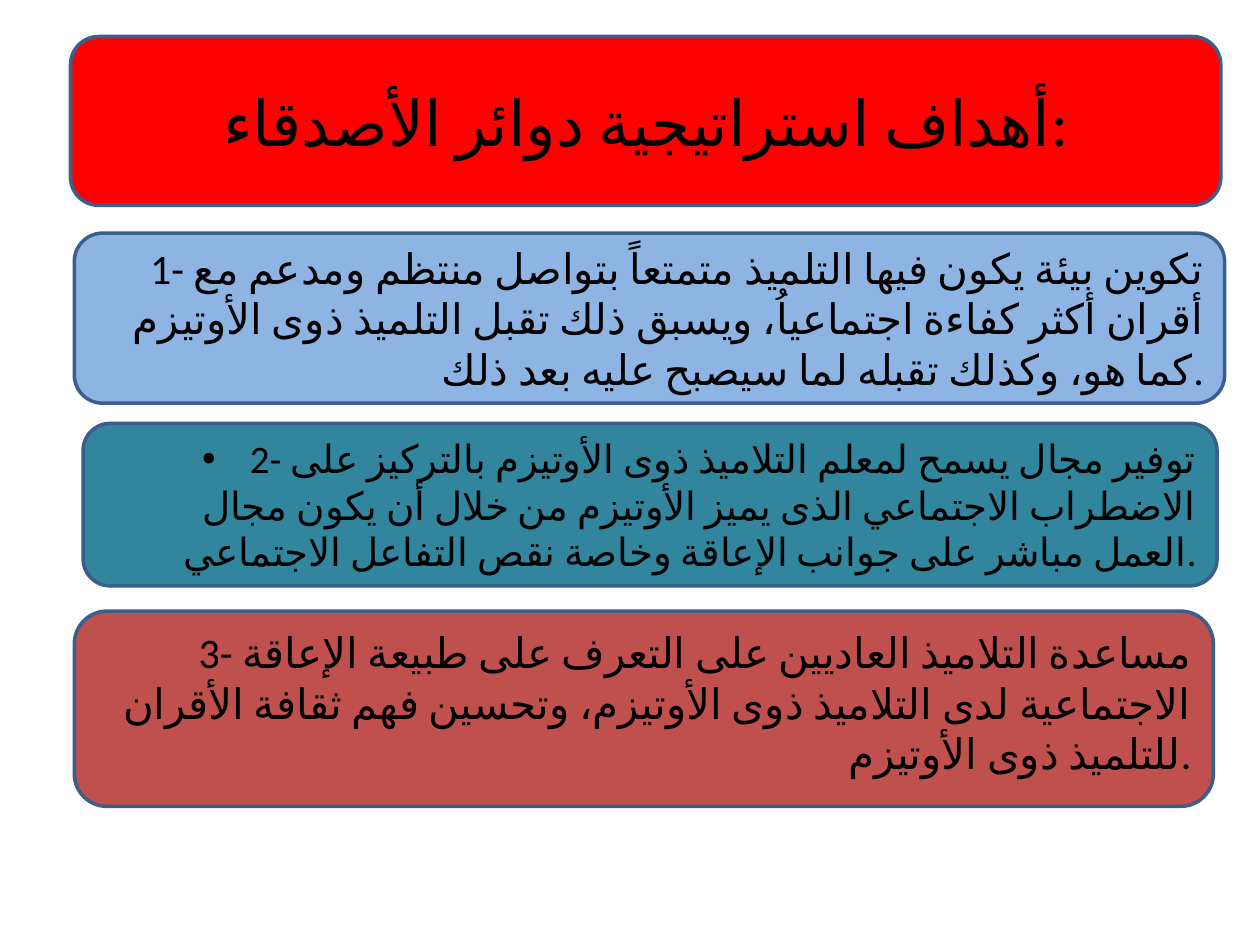
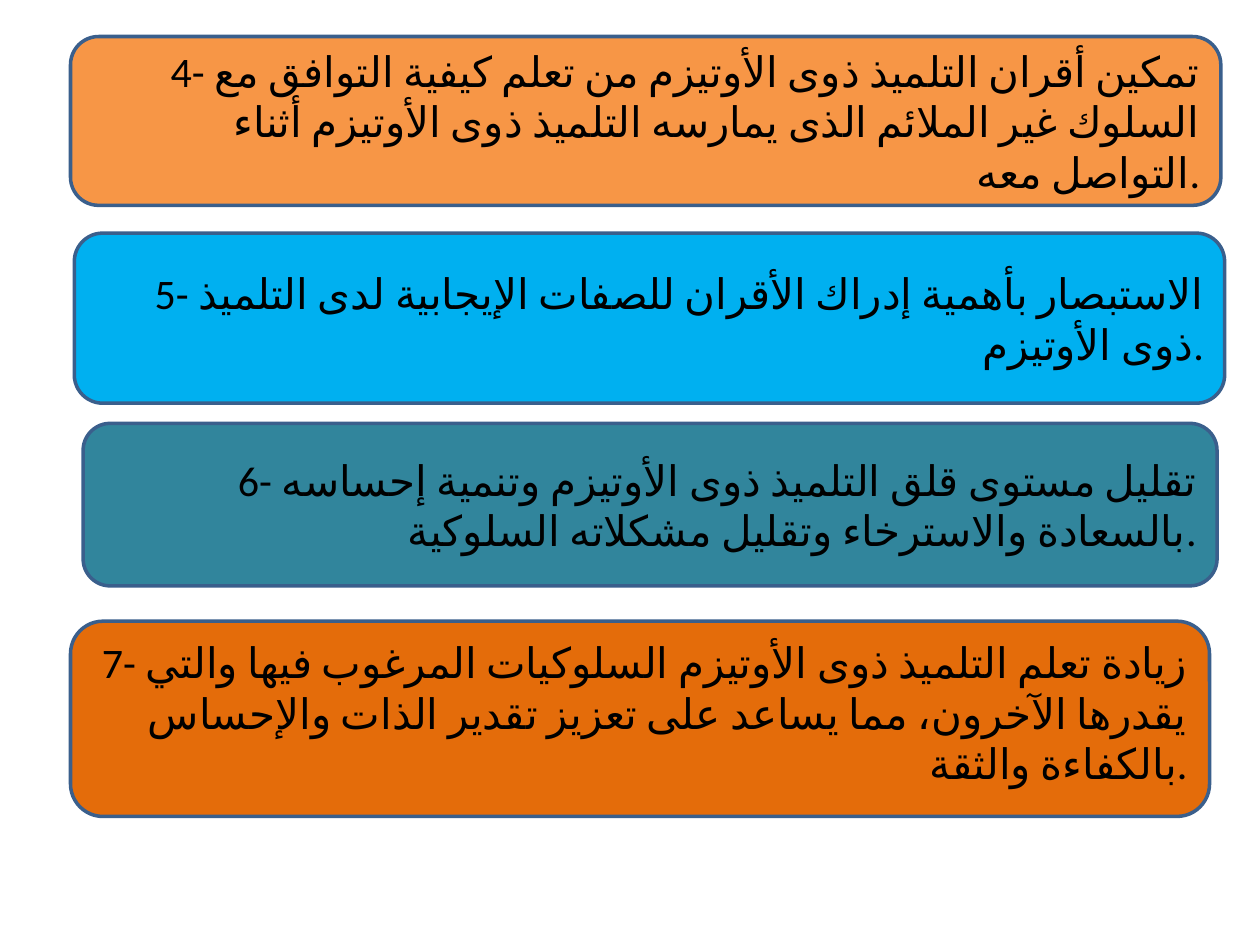
from lxml import etree
from pptx import Presentation
from pptx import util as u
from pptx.dml.color import RGBColor
from pptx.enum import lang, shapes, text
from pptx.oxml.ns import qn

PX = 9144
FONT = "Calibri"
BLACK = RGBColor(0x00, 0x00, 0x00)
OUTLINE = RGBColor(0x3A, 0x5F, 0x8C)
RED = RGBColor(0xFF, 0x00, 0x00)
PALE_BLUE = RGBColor(0x8E, 0xB4, 0xE3)
TEAL = RGBColor(0x31, 0x85, 0x9C)
BRICK = RGBColor(0xC0, 0x50, 0x4D)
ORANGE = RGBColor(0xF7, 0x96, 0x46)
SKY = RGBColor(0x00, 0xB0, 0xF0)
DARK_ORANGE = RGBColor(0xE4, 0x6C, 0x0A)

RIGHT = text.PP_ALIGN.RIGHT
CENTER = text.PP_ALIGN.CENTER
MIDDLE = text.MSO_ANCHOR.MIDDLE
TOP = text.MSO_ANCHOR.TOP

FIRST = (56, 29, 913, 134)
SECOND = (59, 185, 913, 135)
THIRD = (66, 336, 900, 129)
FOURTH_GOALS = (59, 485, 904, 155)
FOURTH_MORE = (56, 493, 904, 155)


def add_panel(page, place, fill, wording, size=24, align=RIGHT, anchor=MIDDLE, before=0, bullet=False):
    box = page.shapes.add_shape(
        shapes.MSO_SHAPE.FLOWCHART_ALTERNATE_PROCESS, *(length * PX for length in place))
    box.shadow.inherit = False
    box.fill.solid()
    box.fill.fore_color.rgb = fill
    box.line.color.rgb = OUTLINE
    box.line.width = u.Pt(2)
    frame = box.text_frame
    frame.word_wrap = True
    frame.vertical_anchor = anchor
    para = frame.paragraphs[0]
    span = para.add_run()
    span.text = wording
    span.font.language_id = lang.MSO_LANGUAGE_ID.ARABIC_EGYPT
    para.alignment = align
    para.space_before = u.Pt(before)
    properties = para._p.get_or_add_pPr()
    if bullet:
        properties.set("marL", str(38 * PX))
        properties.set("indent", str(-38 * PX))
        etree.SubElement(properties, qn("a:buFont"), typeface="Arial")
        etree.SubElement(properties, qn("a:buChar"), char="•")
    para.font.name = FONT
    para.font.size = u.Pt(size)
    para.font.color.rgb = BLACK
    etree.SubElement(properties.find(qn("a:defRPr")), qn("a:cs"), typeface=FONT)


deck = Presentation()
deck.slide_width = 1000 * PX
deck.slide_height = 750 * PX
blank = deck.slide_layouts[6]

goals = deck.slides.add_slide(blank)
add_panel(goals, FIRST, RED, "أهداف استراتيجية دوائر الأصدقاء:", size=36, align=CENTER)
add_panel(goals, SECOND, PALE_BLUE,
          "1- تكوين بيئة يكون فيها التلميذ متمتعاً بتواصل منتظم ومدعم مع أقران أكثر كفاءة اجتماعياُ، "
          "ويسبق ذلك تقبل التلميذ ذوى الأوتيزم كما هو، وكذلك تقبله لما سيصبح عليه بعد ذلك.")
add_panel(goals, THIRD, TEAL,
          "2- توفير مجال يسمح لمعلم التلاميذ ذوى الأوتيزم بالتركيز على الاضطراب الاجتماعي الذى يميز "
          "الأوتيزم من خلال أن يكون مجال العمل مباشر على جوانب الإعاقة وخاصة نقص التفاعل الاجتماعي.",
          size=22.2, before=4.4, bullet=True)
add_panel(goals, FOURTH_GOALS, BRICK,
          "3- مساعدة التلاميذ العاديين على التعرف على طبيعة الإعاقة الاجتماعية لدى التلاميذ ذوى "
          "الأوتيزم، وتحسين فهم ثقافة الأقران للتلميذ ذوى الأوتيزم.",
          anchor=TOP, before=4.8)

more_goals = deck.slides.add_slide(blank)
add_panel(more_goals, FIRST, ORANGE,
          "4- تمكين أقران التلميذ ذوى الأوتيزم من تعلم كيفية التوافق مع السلوك غير الملائم الذى "
          "يمارسه التلميذ ذوى الأوتيزم أثناء التواصل معه.")
add_panel(more_goals, SECOND, SKY,
          "5- الاستبصار بأهمية إدراك الأقران للصفات الإيجابية لدى التلميذ ذوى الأوتيزم.")
add_panel(more_goals, THIRD, TEAL,
          "6- تقليل مستوى قلق التلميذ ذوى الأوتيزم وتنمية إحساسه بالسعادة والاسترخاء وتقليل "
          "مشكلاته السلوكية.",
          before=4.8)
add_panel(more_goals, FOURTH_MORE, DARK_ORANGE,
          "7- زيادة تعلم التلميذ ذوى الأوتيزم السلوكيات المرغوب فيها والتي يقدرها الآخرون، مما يساعد "
          "على تعزيز تقدير الذات والإحساس بالكفاءة والثقة.",
          anchor=TOP, before=4.8)

deck.save("out.pptx")
